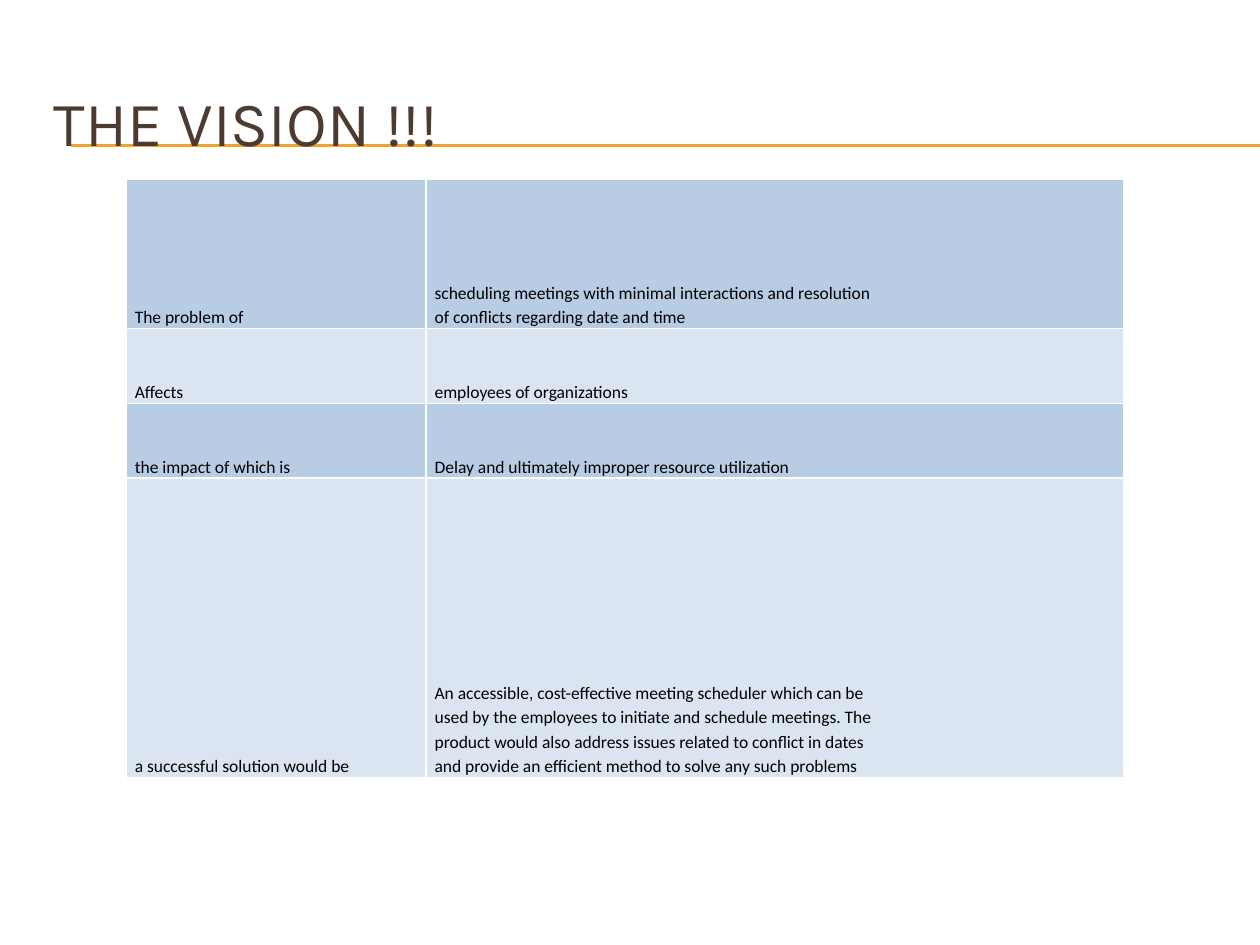
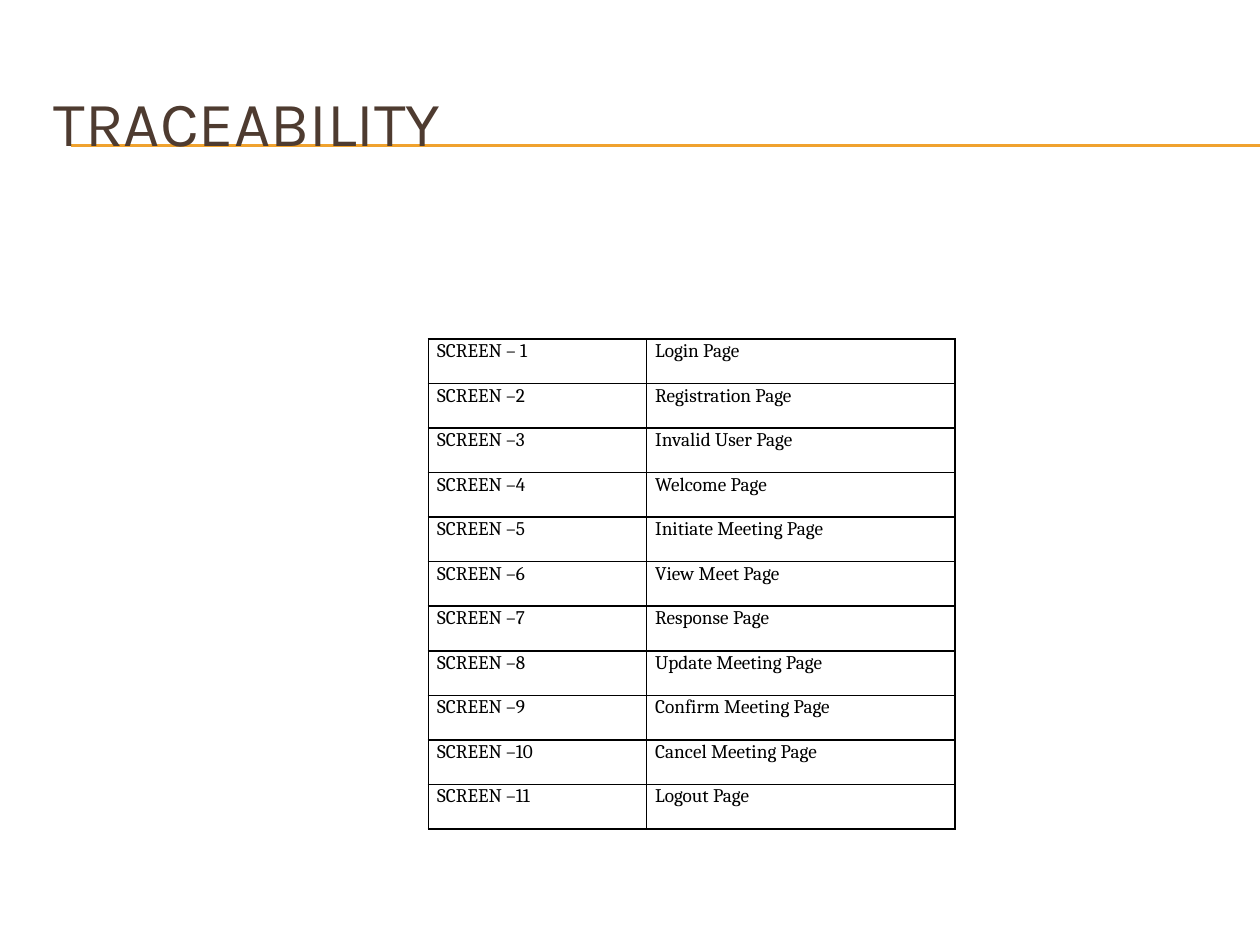
from dataclasses import dataclass

from lxml import etree
from pptx import Presentation
from pptx.dml.color import RGBColor
from pptx.enum.shapes import MSO_CONNECTOR
from pptx.enum.text import MSO_ANCHOR
from pptx.oxml.ns import qn
from pptx.util import Inches, Pt

STRAIGHT = MSO_CONNECTOR.STRAIGHT
TOP = MSO_ANCHOR.TOP
MIDDLE = MSO_ANCHOR.MIDDLE
BOTTOM = MSO_ANCHOR.BOTTOM
BLANK_LAYOUT = 6


@dataclass(frozen=True)
class Theme:
    title_color: str = "4E3B30"
    rule_color: str = "F0A22E"
    text_color: str = "000000"
    title_font: str = "Karla"
    title_size: int = 36
    rule_width: float = 0.75
    border_width: int = 1
    cell_margin: float = 0.07


@dataclass(frozen=True)
class TableStyle:
    font: str
    size: int
    anchor: MSO_ANCHOR
    line_spacing: float
    space_after: int
    border: str
    bands: tuple = ()


THEME = Theme()
VISION_STYLE = TableStyle("Calibri", 10, BOTTOM, 1.15, 0, "FFFFFF", ("B8CCE4", "DBE5F1"))
SCREEN_STYLE = TableStyle("Cambria", 11, TOP, 1.05, 10, "000000")

VISION_ROWS = [
    ("The problem of",
     "scheduling meetings with minimal interactions and resolution\n"
     "of conflicts regarding date and time"),
    ("Affects", "employees of organizations"),
    ("the impact of which is", "Delay and ultimately improper resource utilization"),
    ("a successful solution would be",
     "An accessible, cost-effective meeting scheduler which can be\n"
     "used by the employees to initiate and schedule meetings. The\n"
     "product would also address issues related to conflict in dates\n"
     "and provide an efficient method to solve any such problems"),
]
SCREEN_ROWS = [
    ("SCREEN – 1", "Login Page"),
    ("SCREEN –2", "Registration Page"),
    ("SCREEN –3", "Invalid User Page"),
    ("SCREEN –4", "Welcome Page"),
    ("SCREEN –5", "Initiate Meeting Page"),
    ("SCREEN –6", "View Meet Page"),
    ("SCREEN –7", "Response Page"),
    ("SCREEN –8", "Update Meeting Page"),
    ("SCREEN –9", "Confirm Meeting Page"),
    ("SCREEN –10", "Cancel Meeting Page"),
    ("SCREEN –11", "Logout Page"),
]


def style_font(paragraph, name, size, color):
    paragraph.font.name = name
    paragraph.font.size = Pt(size)
    paragraph.font.color.rgb = RGBColor.from_string(color)


def add_rule(slide, y):
    rule = slide.shapes.add_connector(STRAIGHT, Inches(0.56), Inches(y), Inches(10), Inches(y))
    rule.line.color.rgb = RGBColor.from_string(THEME.rule_color)
    rule.line.width = Pt(THEME.rule_width)
    properties = rule.element.find(qn("p:spPr"))
    etree.SubElement(properties, qn("a:effectLst"))


def add_title(slide, text):
    box = slide.shapes.add_textbox(Inches(0.33), Inches(0.5), Inches(9.5), Inches(0.92))
    frame = box.text_frame
    frame.word_wrap = True
    frame.vertical_anchor = MIDDLE
    paragraph = frame.paragraphs[0]
    paragraph.text = text
    style_font(paragraph, THEME.title_font, THEME.title_size, THEME.title_color)


def add_titled_slide(presentation, title):
    slide = presentation.slides.add_slide(presentation.slide_layouts[BLANK_LAYOUT])
    # Double rule that runs behind the title
    for y in (1.15, 1.16):
        add_rule(slide, y)
    add_title(slide, title)
    return slide


def set_borders(cell, color):
    properties = cell._tc.get_or_add_tcPr()
    for side in ("lnL", "lnR", "lnT", "lnB"):
        line = etree.SubElement(properties, qn(f"a:{side}"), w=str(Pt(THEME.border_width)))
        fill = etree.SubElement(line, qn("a:solidFill"))
        etree.SubElement(fill, qn("a:srgbClr"), val=color)


def fill_cell(cell, text, style, band):
    set_borders(cell, style.border)
    if band:
        cell.fill.solid()
        cell.fill.fore_color.rgb = RGBColor.from_string(band)
    else:
        cell.fill.background()
    cell.margin_left = cell.margin_right = Inches(THEME.cell_margin)
    cell.margin_top = cell.margin_bottom = 0
    cell.vertical_anchor = style.anchor
    paragraph = cell.text_frame.paragraphs[0]
    paragraph.text = text
    paragraph.line_spacing = style.line_spacing
    paragraph.space_after = Pt(style.space_after)
    style_font(paragraph, style.font, style.size, THEME.text_color)


def add_text_table(slide, rows, left, top, column_widths, height, row_shares, style):
    """Split the height among the rows in proportion to row_shares."""
    frame = slide.shapes.add_table(
        len(rows), len(column_widths), Inches(left), Inches(top),
        Inches(sum(column_widths)), Inches(height))
    table = frame.table
    table.first_row = table.horz_banding = False
    for column, width in zip(table.columns, column_widths):
        column.width = Inches(width)
    for index, (texts, share) in enumerate(zip(rows, row_shares)):
        table.rows[index].height = Inches(height * share / sum(row_shares))
        band = style.bands[index % len(style.bands)] if style.bands else None
        for column_index, text in enumerate(texts):
            fill_cell(table.cell(index, column_index), text, style, band)


def main():
    presentation = Presentation()
    presentation.slide_width = Inches(10)
    presentation.slide_height = Inches(7.5)

    # Vision statement
    vision = add_titled_slide(presentation, "THE VISION !!!")
    add_text_table(vision, VISION_ROWS, 1, 1.42, (2.38, 5.54), 4.75, (2, 1, 1, 4), VISION_STYLE)

    # Screens and their pages
    traceability = add_titled_slide(presentation, "TRACEABILITY")
    add_text_table(traceability, SCREEN_ROWS, 3.4, 2.69, (1.73, 2.45), 3.89,
                   [1] * len(SCREEN_ROWS), SCREEN_STYLE)

    presentation.save("out.pptx")


if __name__ == "__main__":
    main()
